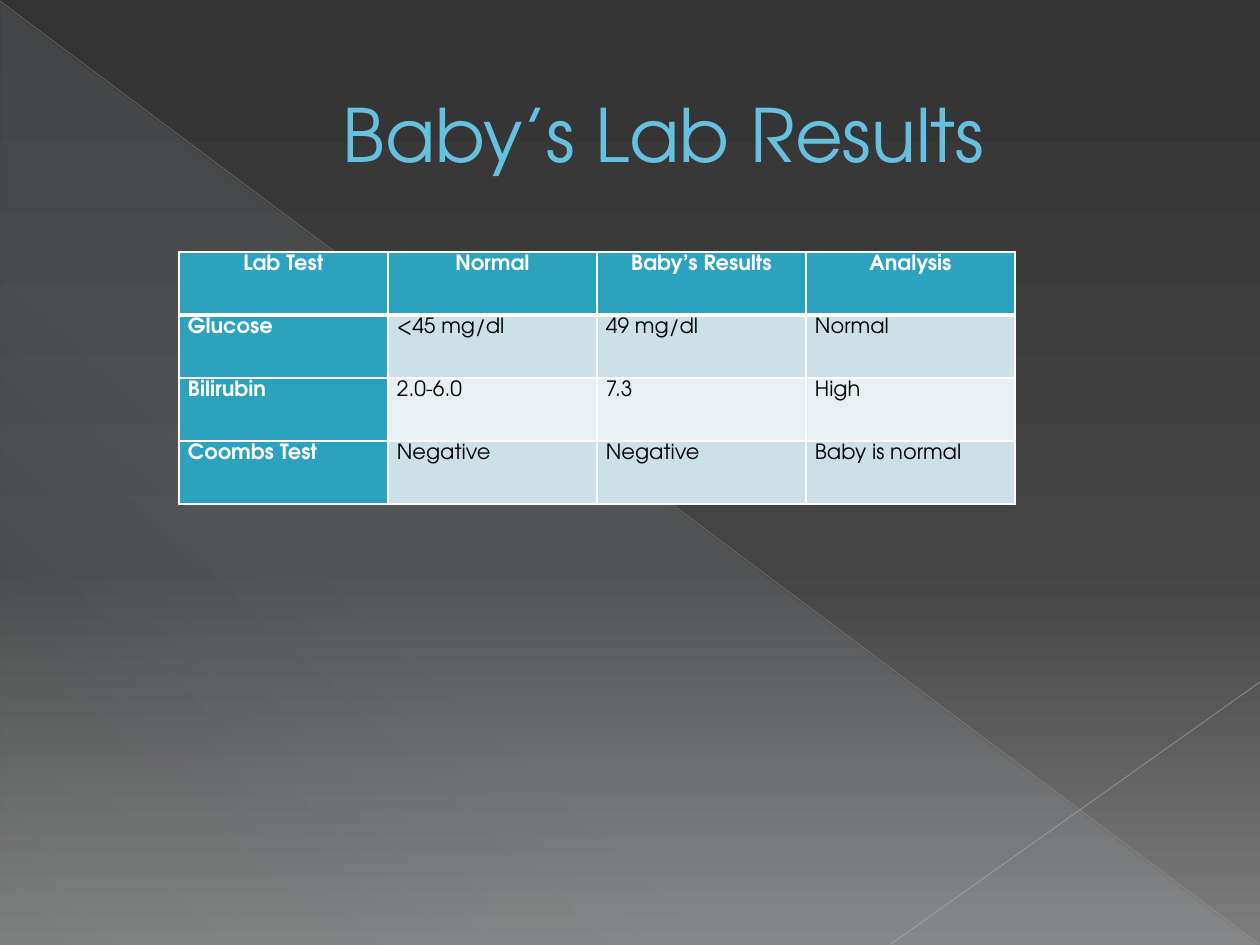
from dataclasses import dataclass

from lxml import etree
from pptx import Presentation
from pptx.dml.color import RGBColor
from pptx.enum.shapes import MSO_CONNECTOR, MSO_SHAPE
from pptx.enum.text import MSO_ANCHOR, PP_ALIGN
from pptx.oxml.ns import qn
from pptx.slide import Slide
from pptx.table import _Cell
from pptx.util import Emu, Pt

RIGHT_TRIANGLE = MSO_SHAPE.RIGHT_TRIANGLE
STRAIGHT = MSO_CONNECTOR.STRAIGHT
MIDDLE = MSO_ANCHOR.MIDDLE
CENTER, LEFT = PP_ALIGN.CENTER, PP_ALIGN.LEFT

PX_PER_INCH = 126
FONT = "TeX Gyre Adventor"

WHITE = RGBColor(0xFF, 0xFF, 0xFF)
BLACK = RGBColor(0x00, 0x00, 0x00)
TEAL = RGBColor(0x2D, 0xA2, 0xBF)
BAND_DARK = RGBColor(0xCD, 0xE0, 0xE8)
BAND_LIGHT = RGBColor(0xE8, 0xF0, 0xF4)
TITLE_BLUE = RGBColor(0x66, 0xC0, 0xE0)
TITLE_OUTLINE = RGBColor(0x1F, 0x70, 0x84)
CHARCOAL = RGBColor(0x33, 0x33, 0x33)
DARK_GRAY = RGBColor(0x44, 0x44, 0x44)
MID_GRAY = RGBColor(0x7D, 0x7D, 0x7D)
PALE_CYAN = RGBColor(0xDE, 0xF5, 0xFA)
LINE_GRAY = RGBColor(0xB9, 0xB9, 0xB9)
LINE_SILVER = RGBColor(0xC1, 0xC1, 0xC1)


@dataclass(frozen=True)
class Stop:
    position: int
    color: RGBColor
    opacity: int = 100


@dataclass(frozen=True)
class Ray:
    start: tuple[int, int]
    end: tuple[int, int]
    color: RGBColor
    width: float
    opacity: int


BACKGROUND_STOPS = [Stop(0, CHARCOAL), Stop(60, DARK_GRAY), Stop(100, MID_GRAY)]
TRIANGLE_STOPS = [
    Stop(0, PALE_CYAN, 10), Stop(70, PALE_CYAN, 8), Stop(100, PALE_CYAN, 1),
]
RAYS = [
    Ray((0, 1), (1259, 944), LINE_GRAY, 0.39, 35),
    Ray((1260, 682), (891, 944), LINE_SILVER, 0.47, 45),
]
LAB_ROWS = [
    ("Lab Test", "Normal", "Baby’s Results", "Analysis"),
    ("Glucose", "<45 mg/dl", "49 mg/dl", "Normal"),
    ("Bilirubin", "2.0-6.0", "7.3", "High"),
    ("Coombs Test", "Negative", "Negative", "Baby is normal"),
]
COLUMN_WIDTH, ROW_HEIGHT = 209, 63


def px(length: int) -> Emu:
    return Emu(round(length * 914400 / PX_PER_INCH))


def add_color(parent, color: RGBColor, opacity: int = 100) -> None:
    element = etree.SubElement(parent, qn("a:srgbClr"), val=str(color))
    if opacity < 100:
        etree.SubElement(element, qn("a:alpha"), val=str(opacity * 1000))


def set_gradient(fill, gradient_parent, stops: list[Stop], angle: int) -> None:
    fill.gradient()
    gradient = gradient_parent.find(qn("a:gradFill"))
    for child in list(gradient):
        gradient.remove(child)
    stop_list = etree.SubElement(gradient, qn("a:gsLst"))
    for stop in stops:
        element = etree.SubElement(stop_list, qn("a:gs"), pos=str(stop.position * 1000))
        add_color(element, stop.color, stop.opacity)
    etree.SubElement(gradient, qn("a:lin"), ang=str(angle * 60000), scaled="0")


def add_backdrop(slide: Slide) -> None:
    background = slide.background
    fill = background.fill
    fill.solid()
    properties = slide.element.find(f".//{qn('p:bgPr')}")
    set_gradient(fill, properties, BACKGROUND_STOPS, 90)

    triangle = slide.shapes.add_shape(RIGHT_TRIANGLE, px(1), px(3), px(1257), px(942))
    triangle.shadow.inherit = False
    triangle.line.fill.background()
    set_gradient(triangle.fill, triangle.element.spPr, TRIANGLE_STOPS, 133)


def add_ray(slide: Slide, ray: Ray) -> None:
    connector = slide.shapes.add_connector(
        STRAIGHT, *map(px, ray.start), *map(px, ray.end))
    connector.line.width = Pt(ray.width)
    connector.line.color.rgb = ray.color
    properties = connector.element.spPr
    color = properties.find(f".//{qn('a:srgbClr')}")
    etree.SubElement(color, qn("a:alpha"), val=str(ray.opacity * 1000))
    etree.SubElement(properties, qn("a:effectLst"))


def add_title(slide: Slide, text: str) -> None:
    title = slide.shapes.title
    title.left, title.top, title.width, title.height = map(px, (63, 37, 1134, 193))
    title.text_frame.text = text
    title.text_frame.vertical_anchor = MIDDLE
    paragraph = title.text_frame.paragraphs[0]
    paragraph.alignment = CENTER
    paragraph_properties = paragraph._p.get_or_add_pPr()
    paragraph_properties.set("marL", str(px(67)))
    paragraph_properties.set("indent", "0")

    font = paragraph.runs[0].font
    font.name, font.size = FONT, Pt(42)
    font.color.rgb = TITLE_BLUE
    outline = etree.Element(qn("a:ln"), w=str(Pt(0.5)))
    add_color(etree.SubElement(outline, qn("a:solidFill")), TITLE_OUTLINE)
    paragraph.runs[0]._r.get_or_add_rPr().insert(0, outline)

    # Bring the title in front of the backdrop
    title.element.getparent().append(title.element)


def set_borders(cell: _Cell, top: int, bottom: int) -> None:
    properties = cell._tc.get_or_add_tcPr()
    for side, width in (("L", 1), ("R", 1), ("T", top), ("B", bottom)):
        border = etree.SubElement(properties, qn(f"a:ln{side}"), w=str(Pt(width)))
        add_color(etree.SubElement(border, qn("a:solidFill")), WHITE)


def format_cell(cell: _Cell, text: str, row: int, column: int) -> None:
    is_heading = row == 0 or column == 0
    set_borders(cell, top=3 if row == 1 else 1, bottom=3 if row == 0 else 1)
    cell.fill.solid()
    band = BAND_DARK if row % 2 else BAND_LIGHT
    cell.fill.fore_color.rgb = TEAL if is_heading else band
    cell.margin_left = cell.margin_right = px(9)
    cell.margin_top = cell.margin_bottom = 0

    cell.text_frame.text = text
    paragraph = cell.text_frame.paragraphs[0]
    paragraph.alignment = CENTER if row == 0 else LEFT
    paragraph.line_spacing = 1.15
    font = paragraph.runs[0].font
    font.name, font.size, font.bold = FONT, Pt(12), is_heading
    font.color.rgb = WHITE if is_heading else BLACK


def add_lab_table(slide: Slide) -> None:
    row_count, column_count = len(LAB_ROWS), len(LAB_ROWS[0])
    table = slide.shapes.add_table(
        row_count, column_count, px(179), px(252),
        px(COLUMN_WIDTH * column_count), px(ROW_HEIGHT * row_count)).table
    table.first_col = True
    for column in table.columns:
        column.width = px(COLUMN_WIDTH)
    for row in table.rows:
        row.height = px(ROW_HEIGHT)
    for row_index, texts in enumerate(LAB_ROWS):
        for column_index, text in enumerate(texts):
            format_cell(table.cell(row_index, column_index), text, row_index, column_index)


def main() -> None:
    presentation = Presentation()
    presentation.slide_width, presentation.slide_height = px(1260), px(945)
    title_only = presentation.slide_layouts[5]
    slide = presentation.slides.add_slide(title_only)

    # Backdrop
    add_backdrop(slide)
    for ray in RAYS:
        add_ray(slide, ray)

    # Content
    add_title(slide, "Baby’s Lab Results")
    add_lab_table(slide)

    presentation.save("out.pptx")


if __name__ == "__main__":
    main()
